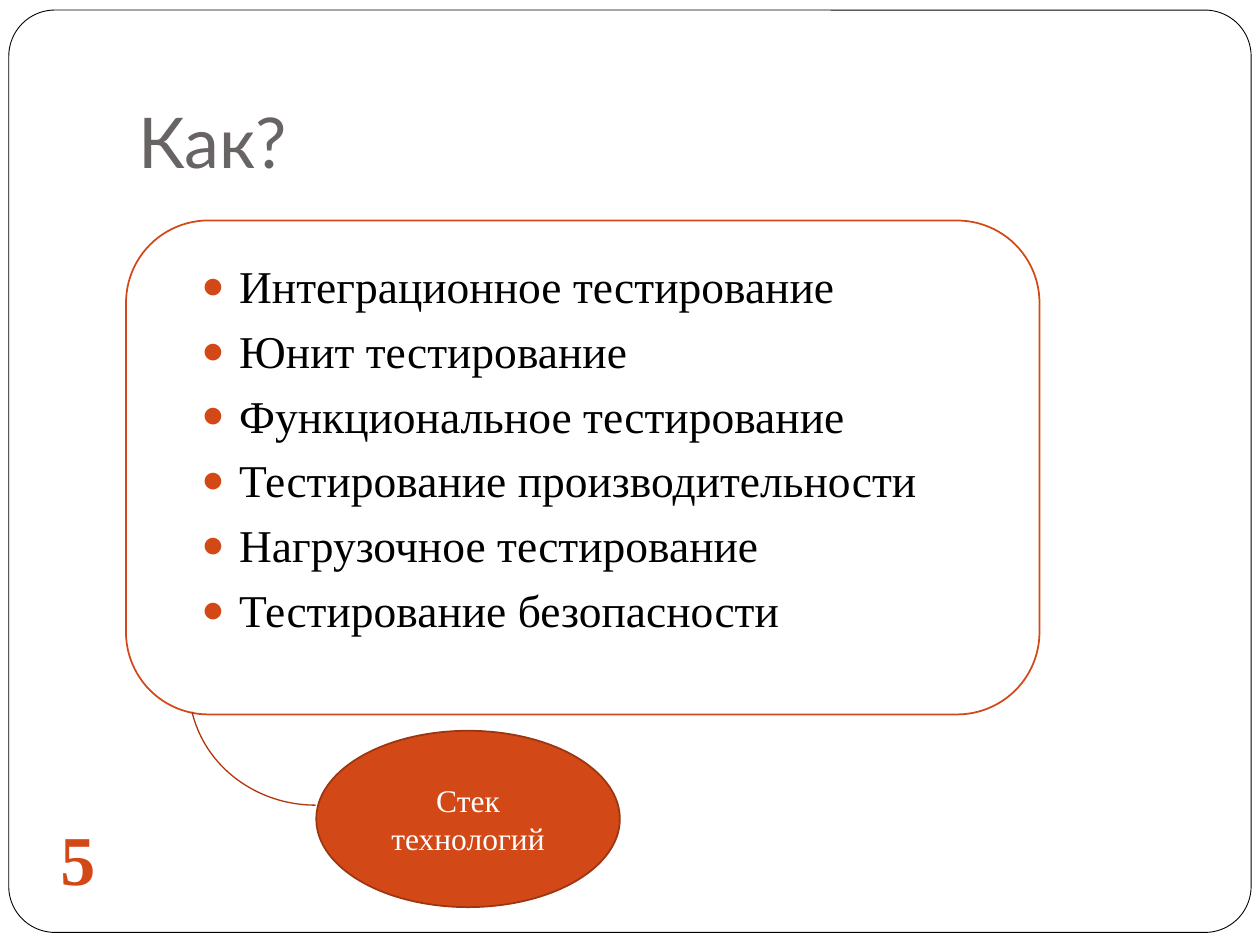
from lxml import etree
from pptx import Presentation
from pptx.dml.color import RGBColor
from pptx.enum import shapes, text
from pptx.oxml import ns
from pptx.util import Inches, Pt

WHITE = RGBColor(0xFF, 0xFF, 0xFF)
BLACK = RGBColor(0, 0, 0)
GRAY = RGBColor(0x69, 0x64, 0x64)
ORANGE = RGBColor(0xD3, 0x48, 0x17)
RUST = RGBColor(0x9C, 0x35, 0x11)
ARC_RUST = RGBColor(0xB1, 0x36, 0x0B)
SERIF = "Times New Roman"
SHAPE = shapes.MSO_SHAPE
TOPICS = [
    "Интеграционное тестирование",
    "Юнит тестирование",
    "Функциональное тестирование",
    "Тестирование производительности",
    "Нагрузочное тестирование",
    "Тестирование безопасности",
]


def write(p, content, size, color, font=SERIF, bold=False, align=text.PP_ALIGN.LEFT):
    p.alignment = align
    r = p.add_run()
    r.text = content
    r.font.size = Pt(size)
    r.font.name = font
    r.font.bold = bold
    r.font.color.rgb = color


def add_shape(slide, kind, box, line, width, fill=None, adjustments=()):
    sp = slide.shapes.add_shape(kind, *map(Inches, box))
    sp.shadow.inherit = False
    if fill is None:
        sp.fill.background()
    else:
        sp.fill.solid()
        sp.fill.fore_color.rgb = fill
    sp.line.color.rgb = line
    sp.line.width = Pt(width)
    for i, value in enumerate(adjustments):
        sp.adjustments[i] = value
    return sp


def add_text_box(slide, box, wrap=True):
    tf = slide.shapes.add_textbox(*map(Inches, box)).text_frame
    tf.word_wrap = wrap
    return tf


def add_bullet(p, color, indent=0.3, percent=85):
    pPr = p._p.get_or_add_pPr()
    pPr.set("marL", str(Inches(indent)))
    pPr.set("indent", str(-Inches(indent)))
    clr = etree.SubElement(pPr, ns.qn("a:buClr"))
    etree.SubElement(clr, ns.qn("a:srgbClr"), val=str(color))
    etree.SubElement(pPr, ns.qn("a:buSzPct"), val=str(percent * 1000))
    etree.SubElement(pPr, ns.qn("a:buFont"), typeface=SERIF)
    etree.SubElement(pPr, ns.qn("a:buChar"), char="●")


def add_bullets(slide, box, items):
    tf = add_text_box(slide, box)
    for i, item in enumerate(items):
        p = tf.add_paragraph() if i else tf.paragraphs[0]
        write(p, item, 26, BLACK)
        p.space_before = Pt(5.8)
        add_bullet(p, ORANGE)


def set_title(slide, box, content):
    sp = slide.shapes.title
    sp.left, sp.top, sp.width, sp.height = map(Inches, box)
    tf = sp.text_frame
    tf.vertical_anchor = text.MSO_ANCHOR.BOTTOM
    tf.margin_bottom = Inches(0.1)
    write(tf.paragraphs[0], content, 40, GRAY, font="Lato")
    return sp


def main():
    prs = Presentation()
    prs.slide_width, prs.slide_height = Inches(10), Inches(7.5)
    slide = prs.slides.add_slide(prs.slide_layouts[5])

    frame = add_shape(slide, SHAPE.ROUNDED_RECTANGLE, (0.07, 0.08, 9.86, 7.32),
                      BLACK, 0.5, WHITE, [0.05])
    title = set_title(slide, (1, 0.3, 8.5, 1.25), "Как?")
    frame._element.addnext(title._element)

    add_shape(slide, SHAPE.ROUNDED_RECTANGLE, (1, 1.75, 7.25, 3.92), ORANGE, 1, WHITE)
    add_bullets(slide, (1.5, 2, 8.5, 5), TOPICS)

    number = add_text_box(slide, (0.38, 6.42, 0.51, 0.77), wrap=False)
    write(number.paragraphs[0], "5", 40, ORANGE, bold=True)

    stack = add_shape(slide, SHAPE.OVAL, (2.51, 5.8, 2.41, 1.4), RUST, 1, ORANGE)
    tf = stack.text_frame
    tf.word_wrap = True
    tf.vertical_anchor = text.MSO_ANCHOR.MIDDLE
    write(tf.paragraphs[0], "Стек технологий", 18, WHITE, align=text.PP_ALIGN.CENTER)

    arc = add_shape(slide, SHAPE.ARC, (1.5, 4.5, 2.01, 1.89), ARC_RUST, 0.75,
                    adjustments=[162, 208.97])
    arc.rotation = 180

    prs.save("out.pptx")


if __name__ == "__main__":
    main()
